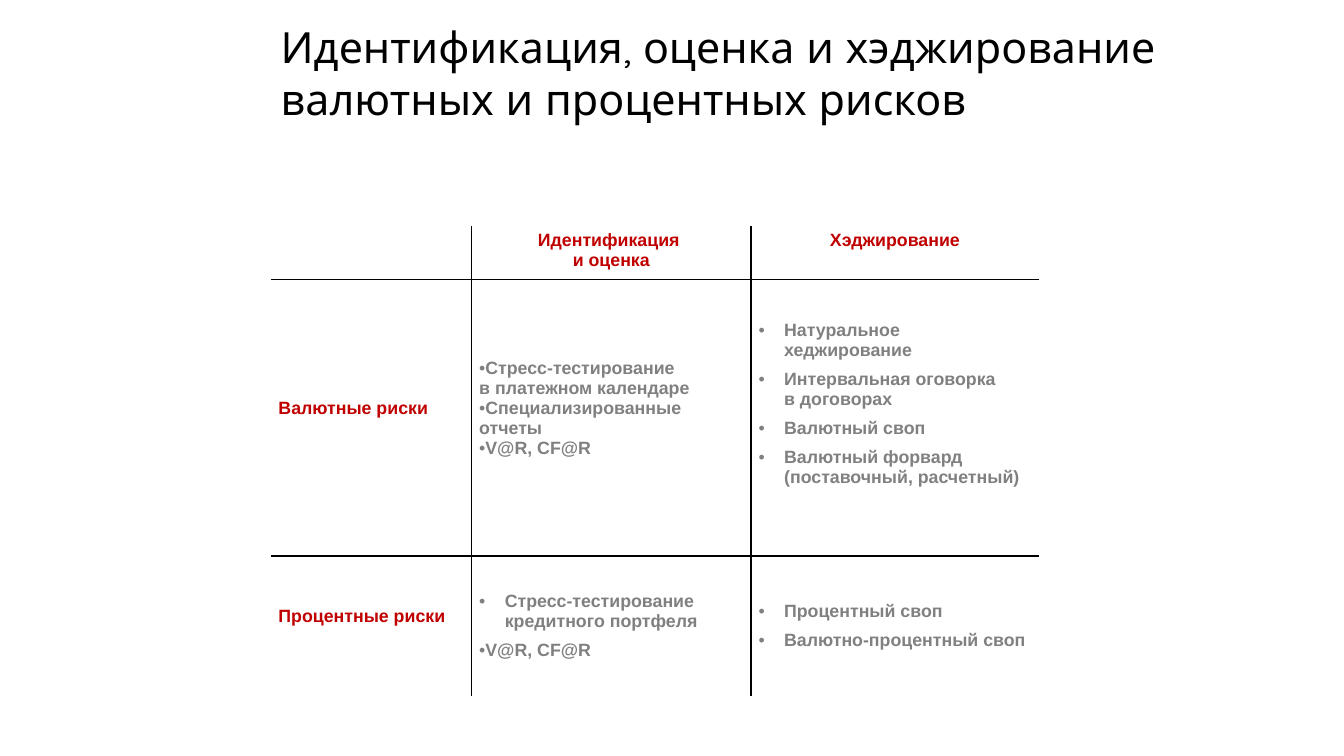
from lxml import etree
from pptx import Presentation
from pptx.dml.color import RGBColor
from pptx.enum import text
from pptx.oxml.ns import qn
from pptx.util import Cm, Pt

RED, GREY, BLACK = "C00000", "808080", "000000"
HANGING, FLUSH = Cm(0.61), Cm(0)
COLUMNS = (4.78, 6.65, 6.86)
ROWS = (1.27, 6.58, 3.33)
# Bottom margins in cm; larger ones lift the text above the middle
BOTTOM_MARGINS = ((0.1, 0.1, 0.1), (0.57, 0.57, 0.77), (0.57, 0.1, 0.1))

TITLE = "Идентификация, оценка и хэджирование валютных и процентных рисков"
HEADERS = ("", "Идентификация \vи оценка", "Хэджирование")
# Each risk: label, then per column the (text, indent) items
RISKS = (
    ("Валютные риски",
     [("Стресс-тестирование \vв платежном календаре", FLUSH),
      ("Специализированные отчеты", FLUSH),
      ("V@R, CF@R", FLUSH)],
     [("Натуральное хеджирование", HANGING),
      ("Интервальная оговорка \vв договорах", HANGING),
      ("Валютный своп", HANGING),
      ("Валютный форвард (поставочный, расчетный)", HANGING)]),
    ("Процентные риски",
     [("Стресс-тестирование \vкредитного портфеля", HANGING),
      ("V@R, CF@R", FLUSH)],
     [("Процентный своп", HANGING),
      ("Валютно-процентный своп", HANGING)]),
)


def color(value):
    return RGBColor.from_string(value)


def set_font(para, name, size, value, bold=False):
    para.font.name = name
    para.font.size = Pt(size)
    para.font.bold = bold
    para.font.color.rgb = color(value)


def add_bullet(para, indent):
    properties = para._p.get_or_add_pPr()
    properties.set("marL", str(indent))
    properties.set("indent", str(-indent))
    etree.SubElement(properties, qn("a:buFont"), typeface="Arial")
    etree.SubElement(properties, qn("a:buChar"), char="•")


def set_borders(cell, visible):
    """Draw 1 pt lines on the visible sides and none on the others."""
    properties = cell._tc.get_or_add_tcPr()
    for position, side in enumerate("LRTB"):
        line = etree.Element(qn(f"a:ln{side}"), w=str(Pt(1)))
        if side in visible:
            fill = etree.SubElement(line, qn("a:solidFill"))
            etree.SubElement(fill, qn("a:srgbClr"), val=BLACK)
        else:
            etree.SubElement(line, qn("a:noFill"))
        properties.insert(position, line)


def fill_label(cell, label, centred=False):
    para = cell.text_frame.paragraphs[0]
    para.text = label
    if centred:
        para.alignment = text.PP_ALIGN.CENTER
    set_font(para, "Arial", 12, RED, bold=True)


def fill_list(cell, items):
    frame = cell.text_frame
    for number, (item, indent) in enumerate(items):
        para = frame.add_paragraph() if number else frame.paragraphs[0]
        para.text = item
        if indent:
            para.space_after = Pt(6)
        add_bullet(para, indent)
        set_font(para, "Arial", 12, GREY, bold=True)


def add_title(page, left, top, width, height):
    title = page.shapes.title
    title.left, title.top, title.width, title.height = left, top, width, height
    title.text_frame.text = TITLE
    title.text_frame.word_wrap = True
    title.text_frame.vertical_anchor = text.MSO_ANCHOR.MIDDLE
    para = title.text_frame.paragraphs[0]
    para.alignment = text.PP_ALIGN.LEFT
    para.line_spacing = 1.0
    set_font(para, "Quicksand", 29, BLACK)


def add_risk_table(page, left, top, width, height):
    table = page.shapes.add_table(len(ROWS), len(COLUMNS), left, top, width, height).table
    table.first_row = table.horz_banding = False
    for column, share in zip(table.columns, COLUMNS):
        column.width = int(width * share / sum(COLUMNS))
    for row, share in zip(table.rows, ROWS):
        row.height = int(height * share / sum(ROWS))

    # Inner grid only
    for r in range(len(ROWS)):
        for c in range(len(COLUMNS)):
            cell = table.cell(r, c)
            cell.fill.background()
            cell.margin_left = cell.margin_right = Cm(0.18)
            cell.margin_top = Cm(0.1)
            cell.margin_bottom = Cm(BOTTOM_MARGINS[r][c])
            if r:
                cell.vertical_anchor = text.MSO_ANCHOR.MIDDLE
            sides = {"L": c > 0, "R": c < len(COLUMNS) - 1,
                     "T": r > 0, "B": r < len(ROWS) - 1}
            set_borders(cell, [side for side, inner in sides.items() if inner])

    # Header row
    for c, header in enumerate(HEADERS):
        if header:
            fill_label(table.cell(0, c), header, centred=True)

    # Risk rows
    for r, (label, assessment, hedging) in enumerate(RISKS, start=1):
        fill_label(table.cell(r, 0), label)
        fill_list(table.cell(r, 1), assessment)
        fill_list(table.cell(r, 2), hedging)


def main():
    deck = Presentation()
    deck.slide_width, deck.slide_height = Cm(32), Cm(18)
    page = deck.slides.add_slide(deck.slide_layouts[5])
    add_title(page, Cm(6.43), Cm(0.3), Cm(24.71), Cm(2.84))
    add_risk_table(page, Cm(6.45), Cm(5.39), Cm(18.29), Cm(11.18))
    deck.save("out.pptx")


if __name__ == "__main__":
    main()
